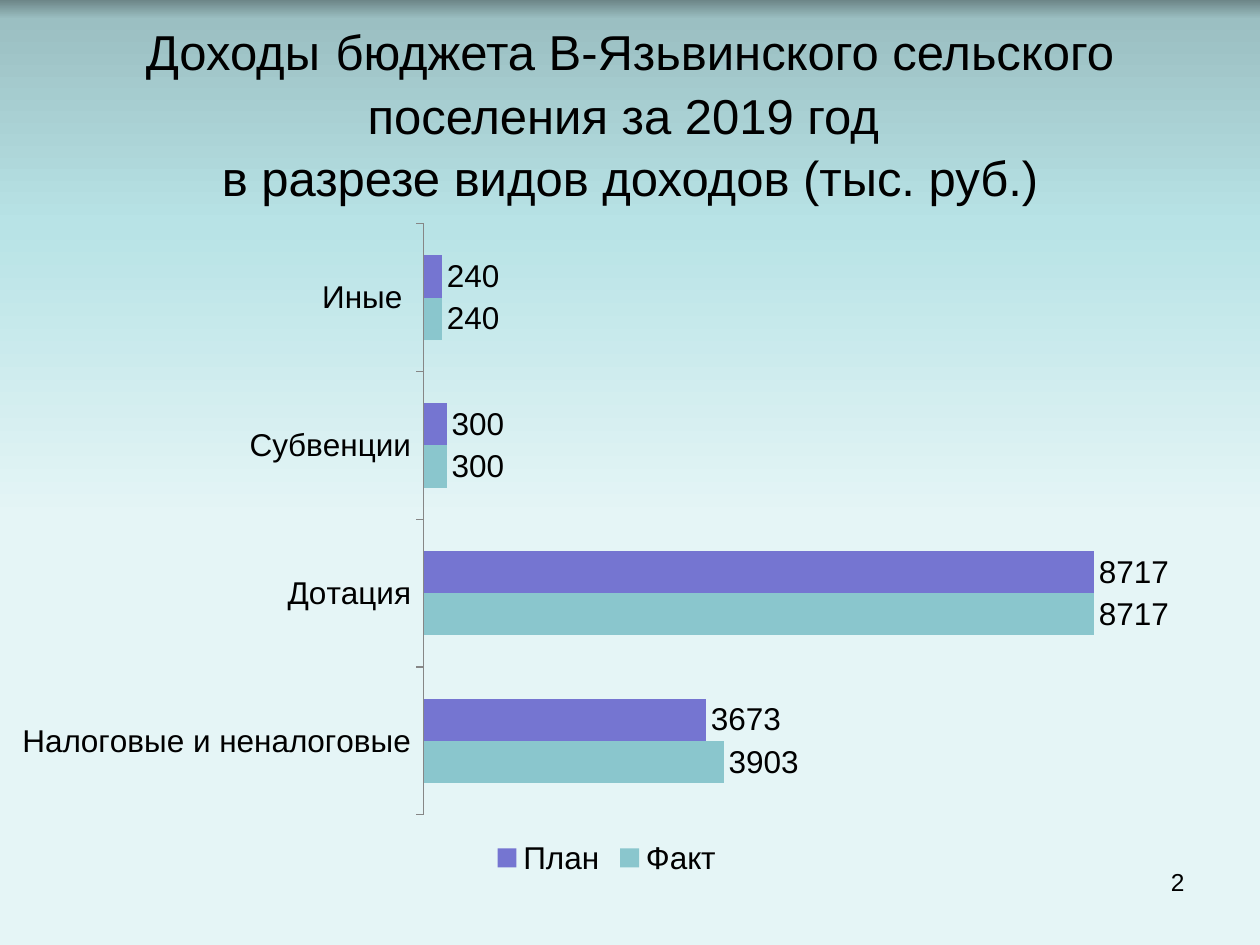
from lxml import etree
from pptx import Presentation
from pptx.chart.data import CategoryChartData
from pptx.dml.color import RGBColor
from pptx.enum import chart as charts, text
from pptx.oxml import parse_xml
from pptx.oxml.ns import nsdecls, qn
from pptx.util import Inches, Pt

# Content
TITLE_LINES = [
    [("Доходы", "title"), (" ", "title_gap"),
     ("бюджета В-Язьвинского сельского поселения за 2019 год ", "title")],
    [("в разрезе видов доходов (тыс. руб.)", "title")],
]
CATEGORIES = ["Налоговые и неналоговые", "Дотация", "Субвенции", "Иные "]
SERIES = [
    ("Факт", [3903, 8717, 300, 240], "8AC6CD"),
    ("План", [3673, 8717, 300, 240], "7575D1"),
]
PAGE_NUMBER = "2"

THEME = {
    "font": "Arial",
    "ink": "000000",
    "axis": "868686",
    "sizes": {"title": 28, "title_gap": 32, "chart": 18, "page": 14},
    "background": [(0, "6D8688"), (2, "9BBFC2"), (24, "B8E3E6"),
                   (55, "E5F5F6"), (100, "E5F5F6")],
}
# Plot area as fractions of the chart frame
PLOT = {"x": 0.35, "y": 0.02, "w": 0.63, "h": 0.88}


def style(font, role):
    font.name = THEME["font"]
    font.size = Pt(THEME["sizes"][role])
    font.color.rgb = RGBColor.from_string(THEME["ink"])


def place(shape, left, top, width, height):
    shape.left, shape.top = Inches(left), Inches(top)
    shape.width, shape.height = Inches(width), Inches(height)


def add_run(paragraph, words, role):
    run = paragraph.add_run()
    run.text = words
    style(run.font, role)


def paint_background(slide):
    fill = slide.background.fill
    fill.gradient()
    fill.gradient_angle = 270  # counter-clockwise: top to bottom
    stops = slide.background._cSld.find(".//" + qn("a:gsLst"))
    for stop in list(stops):
        stops.remove(stop)
    for position, color in THEME["background"]:
        stop = etree.SubElement(stops, qn("a:gs"), pos=str(position * 1000))
        etree.SubElement(stop, qn("a:srgbClr"), val=color)


def add_title(slide):
    title = slide.shapes.title
    place(title, 0.5, 0.17, 9, 1.38)
    frame = title.text_frame
    frame.word_wrap = True
    frame.auto_size = text.MSO_AUTO_SIZE.NONE
    frame.vertical_anchor = text.MSO_ANCHOR.MIDDLE
    heading = frame.paragraphs[0]
    heading.alignment = text.PP_ALIGN.CENTER
    heading.line_spacing = 1.06
    for index, line in enumerate(TITLE_LINES):
        if index:
            heading.add_line_break()
        for words, role in line:
            add_run(heading, words, role)


def add_income_chart(slide):
    data = CategoryChartData(number_format="General")
    data.categories = CATEGORIES
    for name, values, _ in SERIES:
        data.add_series(name, values)
    chart = slide.shapes.add_chart(
        charts.XL_CHART_TYPE.BAR_CLUSTERED, Inches(-0.03), Inches(1.67),
        Inches(9.69), Inches(5.33), data).chart
    style(chart.font, "chart")
    chart.has_title = False

    # Bars and their value labels
    plot = chart.plots[0]
    plot.gap_width, plot.overlap = 150, 0
    plot.vary_by_categories = False
    for bars, (_, _, color) in zip(plot.series, SERIES):
        bars.format.fill.solid()
        bars.format.fill.fore_color.rgb = RGBColor.from_string(color)
        labels = bars.data_labels
        labels.show_value = True
        labels.position = charts.XL_LABEL_POSITION.OUTSIDE_END
        style(labels.font, "chart")

    # Axes
    kinds = chart.category_axis
    kinds.major_tick_mark = charts.XL_TICK_MARK.OUTSIDE
    kinds.format.line.color.rgb = RGBColor.from_string(THEME["axis"])
    kinds.format.line.width = Pt(0.75)
    amounts = chart.value_axis
    amounts.visible = False
    amounts.has_major_gridlines = False
    amounts.minimum_scale, amounts.maximum_scale = 0, 10000

    # Legend
    chart.has_legend = True
    chart.legend.position = charts.XL_LEGEND_POSITION.BOTTOM
    chart.legend.include_in_layout = False
    style(chart.legend.font, "chart")

    # Fixed inner plot area
    sizes = "".join(f'<c:{side} val="{part}"/>' for side, part in PLOT.items())
    layout = parse_xml(
        f'<c:layout {nsdecls("c")}><c:manualLayout>'
        '<c:layoutTarget val="inner"/><c:xMode val="edge"/>'
        f'<c:yMode val="edge"/>{sizes}</c:manualLayout></c:layout>')
    area = chart._chartSpace.find(".//" + qn("c:plotArea"))
    for default in area.findall(qn("c:layout")):
        area.remove(default)
    area.insert(0, layout)


def add_page_number(slide):
    page = slide.shapes.add_textbox(
        Inches(7.17), Inches(6.83), Inches(2.33), Inches(0.52))
    page.text_frame.word_wrap = True
    number = page.text_frame.paragraphs[0]
    number.alignment = text.PP_ALIGN.RIGHT
    add_run(number, PAGE_NUMBER, "page")


def main():
    deck = Presentation()
    deck.slide_width, deck.slide_height = Inches(10), Inches(7.5)
    slide = deck.slides.add_slide(deck.slide_layouts.get_by_name("Title Only"))
    paint_background(slide)
    add_title(slide)
    add_income_chart(slide)
    add_page_number(slide)
    deck.save("out.pptx")


if __name__ == "__main__":
    main()
